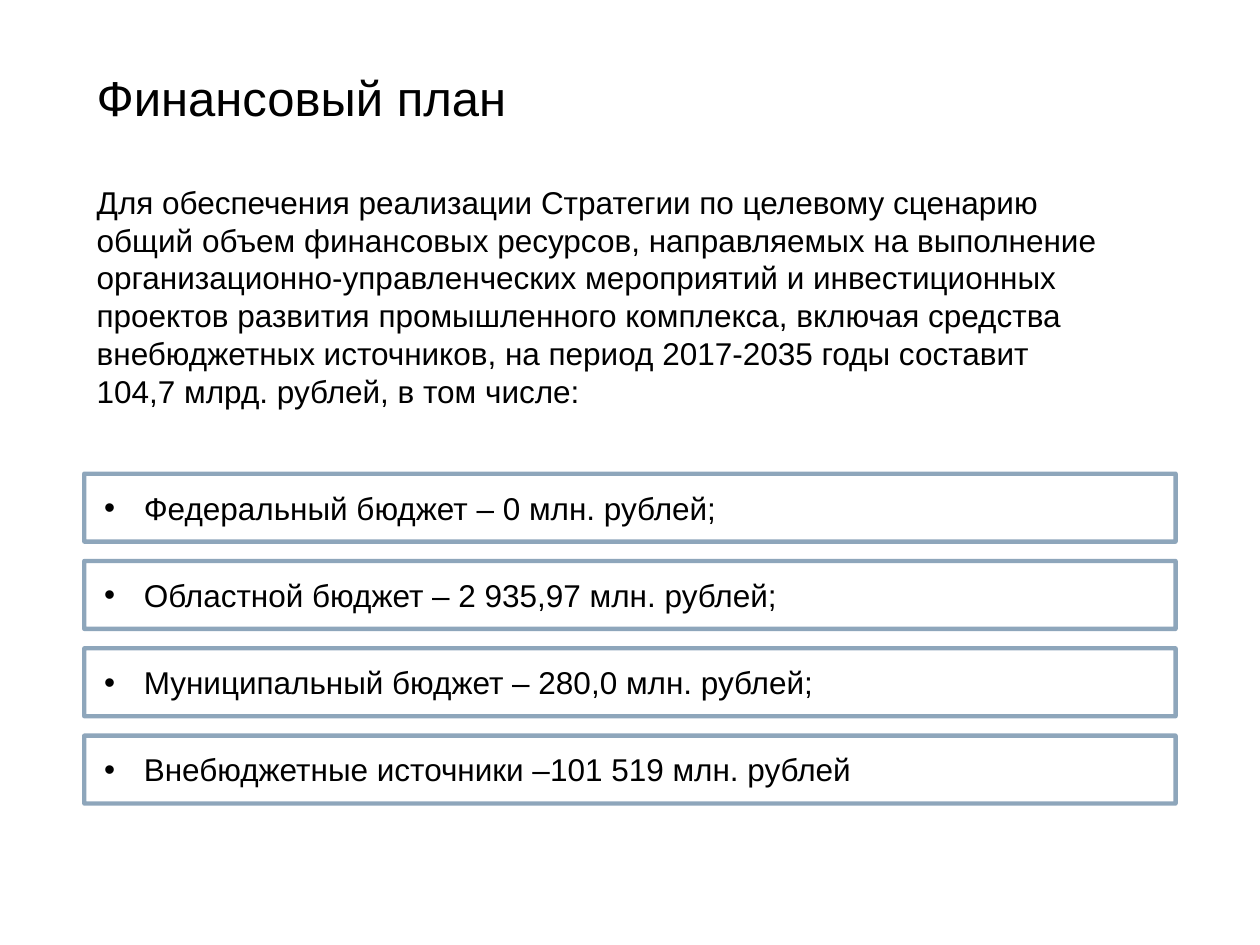
from dataclasses import dataclass

from lxml import etree
from pptx import Presentation
from pptx import util as u
from pptx.dml.color import RGBColor
from pptx.enum import shapes, text
from pptx.oxml.ns import qn


@dataclass(frozen=True)
class Theme:
    font: str = "Arial"
    ink: RGBColor = RGBColor(0, 0, 0)
    paper: RGBColor = RGBColor(255, 255, 255)
    frame: RGBColor = RGBColor(0x1F, 0x4E, 0x79)
    title_size: int = 28
    body_size: int = 18


THEME = Theme()

TITLE = "Финансовый план"
INTRO = (
    "Для обеспечения реализации Стратегии по целевому сценарию\n"
    "общий объем финансовых ресурсов, направляемых на выполнение "
    "организационно-управленческих мероприятий и инвестиционных "
    "проектов развития промышленного комплекса, включая средства "
    "внебюджетных источников, на период 2017-2035 годы составит\n"
    "104,7 млрд. рублей, в том числе:"
)
SOURCES = [
    "Федеральный бюджет – 0 млн. рублей;",
    "Областной бюджет – 2 935,97 млн. рублей;",
    "Муниципальный бюджет – 280,0 млн. рублей;",
    "Внебюджетные источники –101 519 млн. рублей",
]


def style_runs(p, size):
    for r in p.runs:
        r.font.name = THEME.font
        r.font.size = u.Pt(size)
        r.font.color.rgb = THEME.ink


def set_opacity(color_fill, percent):
    """Add an alpha value to the solid colour held by color_fill."""
    color = color_fill.find(".//" + qn("a:srgbClr"))
    etree.SubElement(color, qn("a:alpha")).set("val", str(percent * 1000))


def add_bullet(p, indent):
    pPr = p._p.get_or_add_pPr()
    pPr.set("marL", str(indent))
    pPr.set("indent", str(-indent))
    etree.SubElement(pPr, qn("a:buFont")).set("typeface", THEME.font)
    etree.SubElement(pPr, qn("a:buChar")).set("char", "•")


def add_text(s, box, content, size, anchor, spacing=None):
    tf = s.shapes.add_textbox(*box).text_frame
    tf.word_wrap = True
    tf.vertical_anchor = anchor
    p = tf.paragraphs[0]
    p.text = content
    p.line_spacing = spacing
    style_runs(p, size)


def add_source(s, box, content):
    """One framed line with a bullet."""
    sp = s.shapes.add_shape(shapes.MSO_SHAPE.RECTANGLE, *box)
    sp.shadow.inherit = False
    sp.fill.solid()
    sp.fill.fore_color.rgb = THEME.paper
    sp.line.color.rgb = THEME.frame
    sp.line.width = u.Pt(2.5)
    spPr = sp._element.spPr
    set_opacity(spPr.find(qn("a:solidFill")), 80)
    set_opacity(spPr.find(qn("a:ln")), 50)

    tf = sp.text_frame
    tf.word_wrap = True
    tf.vertical_anchor = text.MSO_ANCHOR.TOP
    tf.margin_left, tf.margin_right = u.Cm(0.4), u.Cm(0.6)
    tf.margin_top = tf.margin_bottom = u.Cm(0.3)
    p = tf.paragraphs[0]
    p.text = content
    add_bullet(p, u.Cm(0.8))
    p.alignment = text.PP_ALIGN.LEFT
    style_runs(p, THEME.body_size)


def add_sources(s, left, top, width, height, gap):
    """Stack of framed lines, evenly spaced."""
    for i, source in enumerate(SOURCES):
        add_source(s, (left, top + i * (height + gap), width, height), source)


def add_plan_slide(prs):
    s = prs.slides.add_slide(prs.slide_layouts[6])
    left, width = u.Cm(1.7), u.Cm(22)
    # Heading and introduction
    add_text(s, (left, u.Cm(0.53), width, u.Cm(3)), TITLE,
             THEME.title_size, text.MSO_ANCHOR.MIDDLE, spacing=0.9)
    add_text(s, (left, u.Cm(3.56), width, u.Cm(4.88)), INTRO,
             THEME.body_size, text.MSO_ANCHOR.TOP)
    # Funding sources
    add_sources(s, left, u.Cm(9.55), width, u.Cm(1.37), u.Cm(0.39))


def main():
    prs = Presentation()
    prs.slide_width, prs.slide_height = u.Cm(25.4), u.Cm(19.05)
    add_plan_slide(prs)
    prs.save("out.pptx")


if __name__ == "__main__":
    main()
